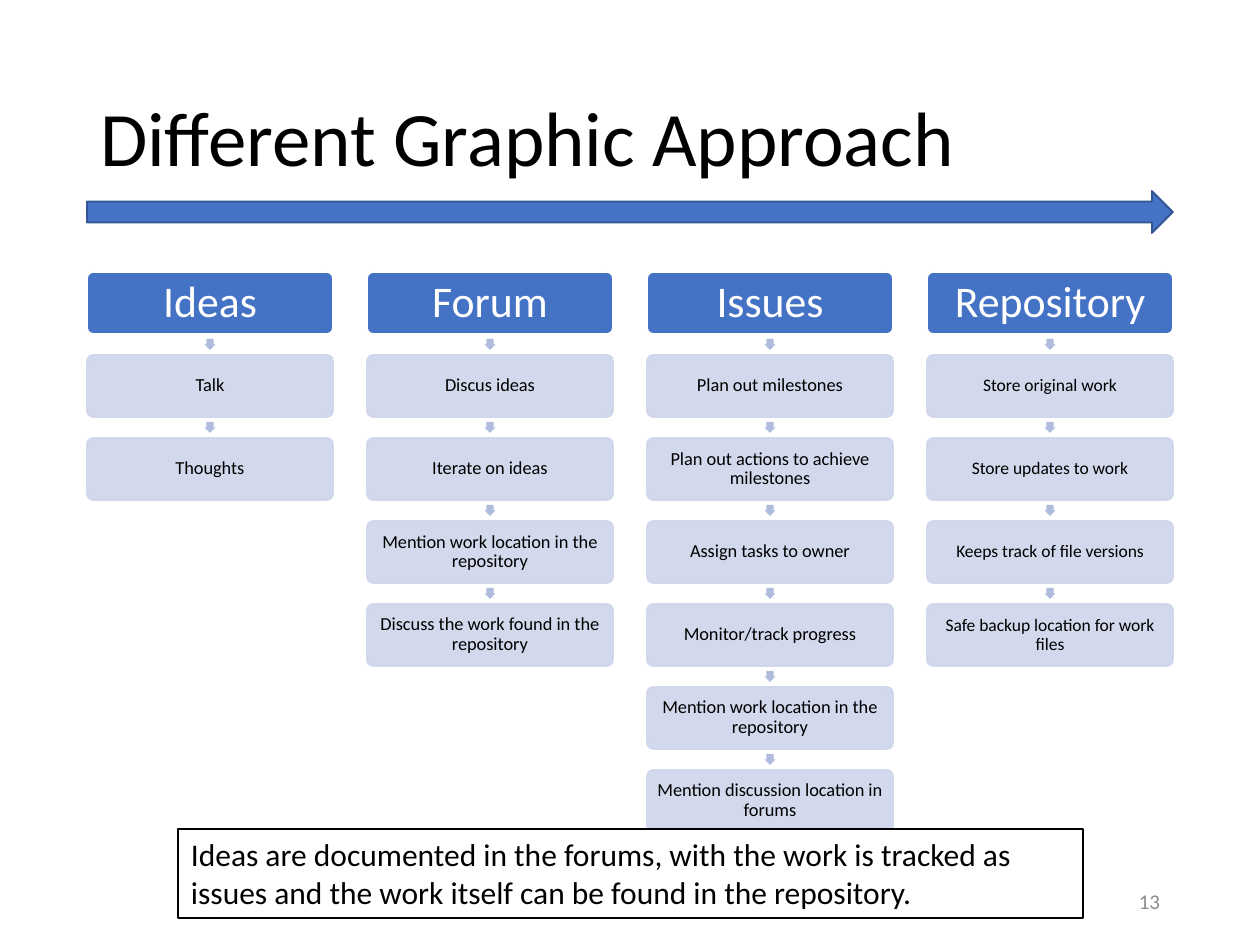
from lxml import etree
from pptx import Presentation
from pptx.dml.color import RGBColor
from pptx.enum.shapes import MSO_SHAPE
from pptx.enum.text import MSO_ANCHOR, PP_ALIGN
from pptx.oxml.ns import qn
from pptx.util import Emu, Pt

PX = 914400 / 126
FONT = "Calibri"
ROUNDED, ARROW, RECT = MSO_SHAPE.ROUNDED_RECTANGLE, MSO_SHAPE.RIGHT_ARROW, MSO_SHAPE.RECTANGLE
TOP, MIDDLE = MSO_ANCHOR.TOP, MSO_ANCHOR.MIDDLE
LEFT, CENTER, RIGHT = PP_ALIGN.LEFT, PP_ALIGN.CENTER, PP_ALIGN.RIGHT
COLORS = {
    "black": "000000",
    "white": "FFFFFF",
    "blue": "4472C4",
    "navy": "325491",
    "step": "CFD5EA",
    "link": "B0BCDE",
    "grey": "8C8C8C",
}
COLUMNS = [
    ("Ideas", 10.5, ["Talk", "Thoughts"]),
    ("Forum", 10.5, [
        "Discus ideas",
        "Iterate on ideas",
        "Mention work location in the repository",
        "Discuss the work found in the repository",
    ]),
    ("Issues", 10.5, [
        "Plan out milestones",
        "Plan out actions to achieve milestones",
        "Assign tasks to owner",
        "Monitor/track progress",
        "Mention work location in the repository",
        "Mention discussion location in forums",
    ]),
    ("Repository", 10, [
        "Store original work",
        "Store updates to work",
        "Keeps track of file versions",
        "Safe backup location for work files",
    ]),
]
SUMMARY = ("Ideas are documented in the forums, with the work is tracked as issues "
           "and the work itself can be found in the repository.")


def px(n):
    """Turn pixels into EMU."""
    return Emu(round(n * PX))


def rgb(name):
    """Look up a named colour."""
    return RGBColor.from_string(COLORS[name])


def set_text(sp, text, size, color, align, anchor=MIDDLE, spacing=1.0, margins=(13, 6)):
    """Write one formatted paragraph into a shape."""
    tf = sp.text_frame
    tf.text = text
    tf.word_wrap = True
    tf.vertical_anchor = anchor
    tf.margin_left = tf.margin_right = px(margins[0])
    tf.margin_top = tf.margin_bottom = px(margins[1])
    p = tf.paragraphs[0]
    p.alignment, p.line_spacing = align, spacing
    font = p.runs[0].font
    font.name, font.size, font.color.rgb = FONT, Pt(size), rgb(color)


def add_box(s, kind, box, fill, line=None, alpha=None):
    """Add a flat preset shape with an optional outline and opacity in percent."""
    sp = s.shapes.add_shape(kind, *map(px, box))
    sp.shadow.inherit = False
    sp.fill.solid()
    sp.fill.fore_color.rgb = rgb(fill)
    if line:
        sp.line.color.rgb = rgb(line)
        sp.line.width = Pt(1)
    else:
        sp.line.fill.background()
    if alpha:
        for clr in sp._element.spPr.iter(qn("a:srgbClr")):
            etree.SubElement(clr, qn("a:alpha"), val=str(alpha * 1000))
    return sp


def add_title(s, box):
    """Place the slide title."""
    sp = s.shapes.title
    sp.left, sp.top, sp.width, sp.height = map(px, box)
    set_text(sp, "Different Graphic Approach", 44, "black", LEFT, spacing=0.9)


def add_column(s, box, pitch, heading, size, steps):
    """Stack a heading and its steps downwards from the first box, linked by arrows."""
    x, y, w, h = box
    arrow = 11
    for i, text in enumerate([heading] + steps):
        top = y + i * pitch
        if i:
            link = add_box(s, ARROW, (x + (w - arrow) / 2, top - 16, arrow, arrow), "link")
            link.adjustments[0] = 0.67
            link.rotation = 90
            sp = add_box(s, ROUNDED, (x, top, w, h), "step", "step", 90)
            set_text(sp, text, size, "black", CENTER, spacing=0.9, margins=(4, 4))
        else:
            sp = add_box(s, ROUNDED, (x, top, w, h), "blue", "white")
            set_text(sp, text, 25, "white", CENTER, spacing=0.9, margins=(5, 5))
        sp.adjustments[0] = 0.1


def add_columns(s, box):
    """Spread the columns evenly over the width of the box."""
    x, y, w, h = box
    col_w, row_h = 246, 62
    step_x = (w - col_w) / (len(COLUMNS) - 1)
    rows = max(len(steps) for _, _, steps in COLUMNS)
    step_y = (h - row_h) / rows
    for i, column in enumerate(COLUMNS):
        add_column(s, (x + i * step_x, y, col_w, row_h), step_y, *column)


def add_number(s, box):
    """Add the slide number."""
    sp = s.shapes.add_textbox(*map(px, box))
    set_text(sp, "13", 12, "grey", RIGHT)


def add_summary(s, box):
    """Add the outlined summary."""
    sp = add_box(s, RECT, box, "white", "black")
    set_text(sp, SUMMARY, 18, "black", LEFT, TOP)


def main():
    """Build and save the slide."""
    prs = Presentation()
    prs.slide_width, prs.slide_height = px(1260), px(945)
    s = prs.slides.add_slide(prs.slide_layouts[5])
    add_title(s, (87, 50, 1086, 183))
    add_columns(s, (87, 272, 1086, 560))
    add_number(s, (890, 876, 283, 50))
    add_box(s, ARROW, (87, 191, 1086, 42), "blue", "navy")
    add_summary(s, (178, 829, 905, 89))
    prs.save("out.pptx")


if __name__ == "__main__":
    main()
